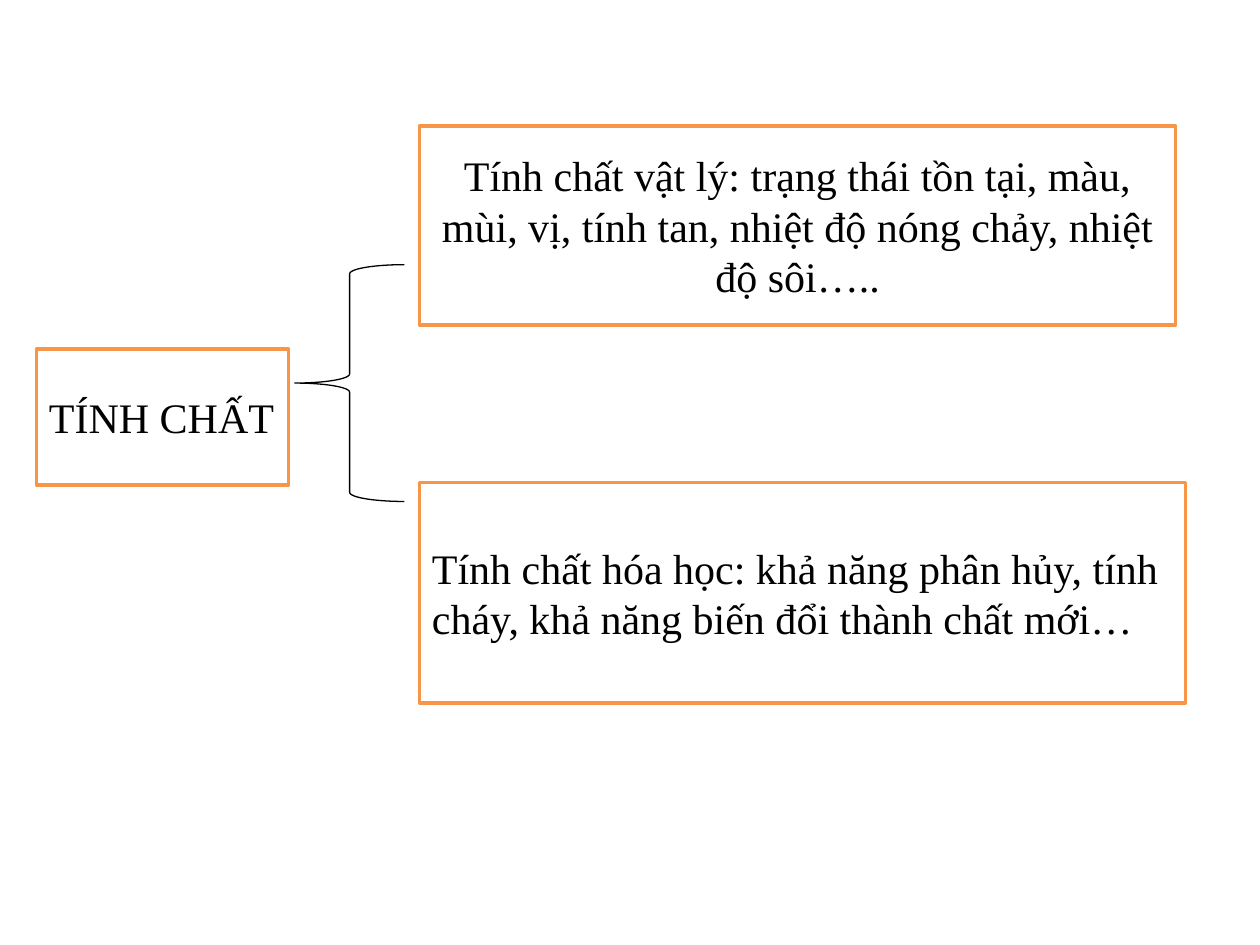
from pptx import Presentation
from pptx import util as u
from pptx.dml.color import RGBColor
from pptx.enum import shapes, text

BLACK, WHITE, ORANGE = "000000", "FFFFFF", "F79646"


def color(value):
    return RGBColor.from_string(value)


def add_outlined(slide, kind, box, line, width):
    sp = slide.shapes.add_shape(kind, *[u.Inches(v) for v in box])
    sp.shadow.inherit = False
    sp.line.color.rgb = color(line)
    sp.line.width = u.Pt(width)
    return sp


def write_text(sp, content, size=24, font="Times New Roman", ink=BLACK,
               align=text.PP_ALIGN.LEFT):
    tf = sp.text_frame
    tf.word_wrap = True
    tf.vertical_anchor = text.MSO_ANCHOR.MIDDLE
    p = tf.paragraphs[0]
    p.alignment = align
    r = p.add_run()
    r.text = content
    r.font.size = u.Pt(size)
    r.font.name = font
    r.font.color.rgb = color(ink)


def add_text_box(slide, box, content, **fmt):
    sp = add_outlined(slide, shapes.MSO_SHAPE.RECTANGLE, box, ORANGE, 2)
    sp.fill.solid()
    sp.fill.fore_color.rgb = color(WHITE)
    write_text(sp, content, **fmt)


def add_brace(slide, box):
    sp = add_outlined(slide, shapes.MSO_SHAPE.RIGHT_BRACE, box, BLACK, 0.75)
    sp.fill.background()
    sp.rotation = 180


def main():
    prs = Presentation()
    prs.slide_width, prs.slide_height = u.Inches(10), u.Inches(7.5)
    slide = prs.slides.add_slide(prs.slide_layouts[6])
    add_text_box(slide, (0.29, 2.77, 2, 1.08), "TÍNH CHẤT")
    add_text_box(slide, (3.33, 1, 6, 1.58),
                 "Tính chất vật lý: trạng thái tồn tại, màu, mùi, vị, "
                 "tính tan, nhiệt độ nóng chảy, nhiệt độ sôi…..",
                 align=text.PP_ALIGN.CENTER)
    add_text_box(slide, (3.33, 3.83, 6.08, 1.75),
                 "Tính chất hóa học: khả năng phân hủy, tính cháy, "
                 "khả năng biến đổi thành chất mới…")
    add_brace(slide, (2.34, 2.1, 0.87, 1.88))
    prs.save("out.pptx")


if __name__ == "__main__":
    main()
